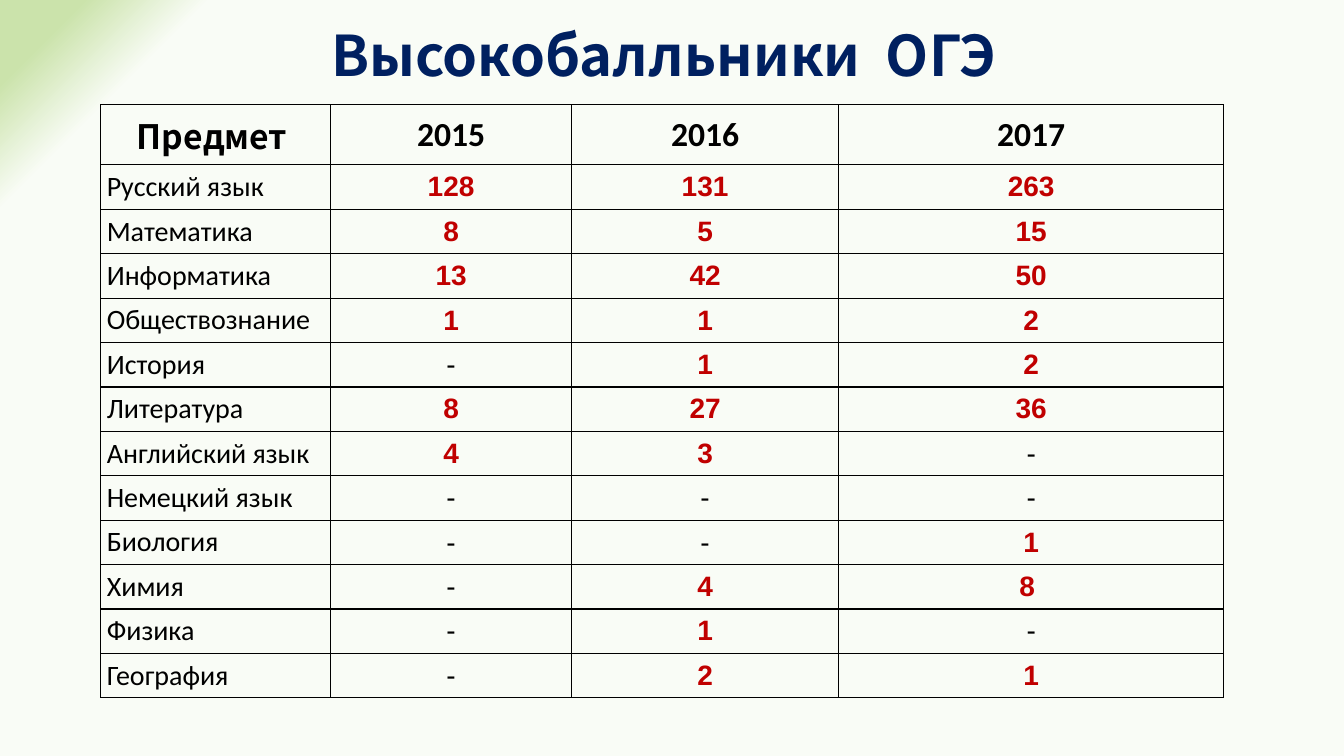
from pptx import Presentation
from pptx.dml.color import RGBColor
from pptx.enum.text import MSO_ANCHOR, PP_ALIGN
from pptx.oxml import parse_xml
from pptx.oxml.ns import nsdecls, qn
from pptx.util import Pt

COLORS = {"title": "002060", "text": "000000", "score": "C00000", "border": "000000",
          "paper": "F9FCF6", "green": "CBE3AB", "pale": "DCECC7"}
HEADING_FONT = "Noto Sans CJK KR"


def add_span(para, text, font, size, color, bold):
    span = para.add_run()
    span.text = text
    span.font.name = font
    span.font.size = Pt(size)
    span.font.bold = bold
    span.font.color.rgb = RGBColor.from_string(COLORS[color])
    return span


def add_borders(cell):
    properties = cell._tc.get_or_add_tcPr()
    for index, side in enumerate(("lnL", "lnR", "lnT", "lnB")):
        properties.insert(index, parse_xml(
            f'<a:{side} {nsdecls("a")} w="{Pt(1)}"><a:solidFill>'
            f'<a:srgbClr val="{COLORS["border"]}"/></a:solidFill></a:{side}>'))


deck = Presentation()
deck.slide_width, deck.slide_height = Pt(960), Pt(540)
page = deck.slides.add_slide(deck.slide_layouts[5])

# Background: green glow in the top left corner
stops = "".join(
    f'<a:gs pos="{percent * 1000}"><a:srgbClr val="{COLORS[name]}"/></a:gs>'
    for percent, name in ((90, "paper"), (96, "green"), (100, "green"), (100, "pale")))
page.element.find(qn("p:cSld")).insert(0, parse_xml(
    f'<p:bg {nsdecls("p", "a")}><p:bgPr><a:gradFill><a:gsLst>{stops}</a:gsLst>'
    '<a:path path="circle"><a:fillToRect l="100000" t="100000"/></a:path>'
    '</a:gradFill><a:effectLst/></p:bgPr></p:bg>'))

# Title, with a widened gap between the words
title = page.shapes.title
title.left, title.top, title.width, title.height = Pt(191.5), Pt(-8), Pt(565), Pt(75)
title.text_frame.vertical_anchor = MSO_ANCHOR.BOTTOM
para = title.text_frame.paragraphs[0]
para.alignment = PP_ALIGN.CENTER
para.line_spacing = 0.9
for text in ("Высокобалльники", " ", "ОГЭ"):
    span = add_span(para, text, HEADING_FONT, 40, "title", True)
    if text == " ":
        span._r.get_or_add_rPr().set("spc", "900")

# Table of top scorers by subject and year
rows = [
    ("Предмет ", "2015", "2016", "2017"),
    ("Русский язык", "128", "131", "263"),
    ("Математика", "8", "5", "15"),
    ("Информатика", "13", "42", "50"),
    ("Обществознание", "1", "1", "2"),
    ("История", "-", "1", "2"),
    ("Литература", "8", "27", "36"),
    ("Английский язык", "4", "3", "-"),
    ("Немецкий язык", "-", "-", "-"),
    ("Биология", "-", "-", "1"),
    ("Химия", "-", "4", "8 "),
    ("Физика", "-", "1", "-"),
    ("География", "-", "2", "1"),
]
column_widths = (164.2, 172.1, 190.8, 275)
header_height, row_height = 43, 31.7
table = page.shapes.add_table(
    len(rows), len(column_widths), Pt(72), Pt(74.8), Pt(sum(column_widths)),
    Pt(header_height + row_height * (len(rows) - 1))).table
table.first_row = table.horz_banding = False
for column, width in zip(table.columns, column_widths):
    column.width = Pt(width)

for row_index, values in enumerate(rows):
    is_header = row_index == 0
    table.rows[row_index].height = Pt(header_height if is_header else row_height)
    for column_index, value in enumerate(values):
        is_subject = column_index == 0
        cell = table.cell(row_index, column_index)
        cell.fill.background()
        add_borders(cell)
        cell.vertical_anchor = MSO_ANCHOR.MIDDLE
        cell.margin_left = cell.margin_right = Pt(4.3)
        cell.margin_top = cell.margin_bottom = Pt(3.6)
        para = cell.text_frame.paragraphs[0]
        para.alignment = PP_ALIGN.LEFT if is_subject and not is_header else PP_ALIGN.CENTER
        if is_header:
            font = HEADING_FONT if is_subject else "Calibri"
            add_span(para, value, font, 24, "text", True)
        elif is_subject:
            add_span(para, value, "Calibri", 20, "text", False)
        else:
            scored = value != "-"
            add_span(para, value, "Arial", 20, "score" if scored else "text", scored)

deck.save("out.pptx")
